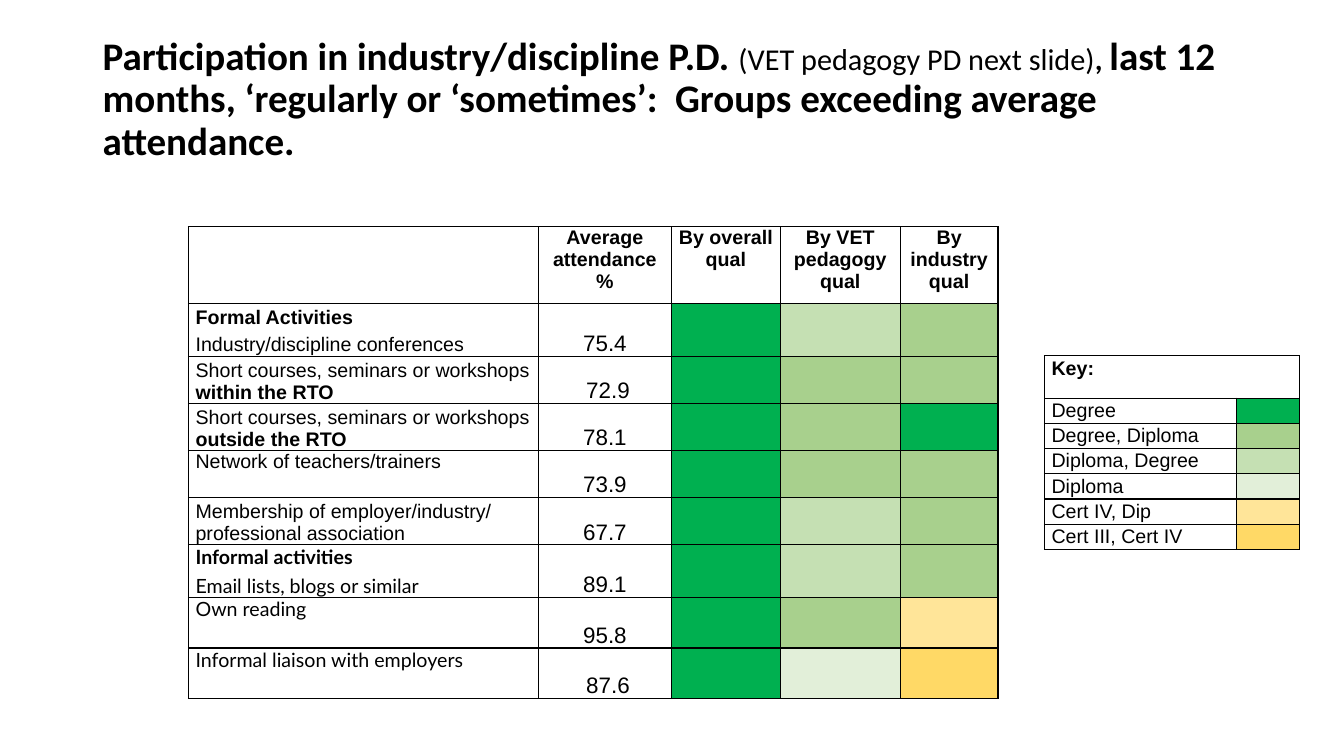
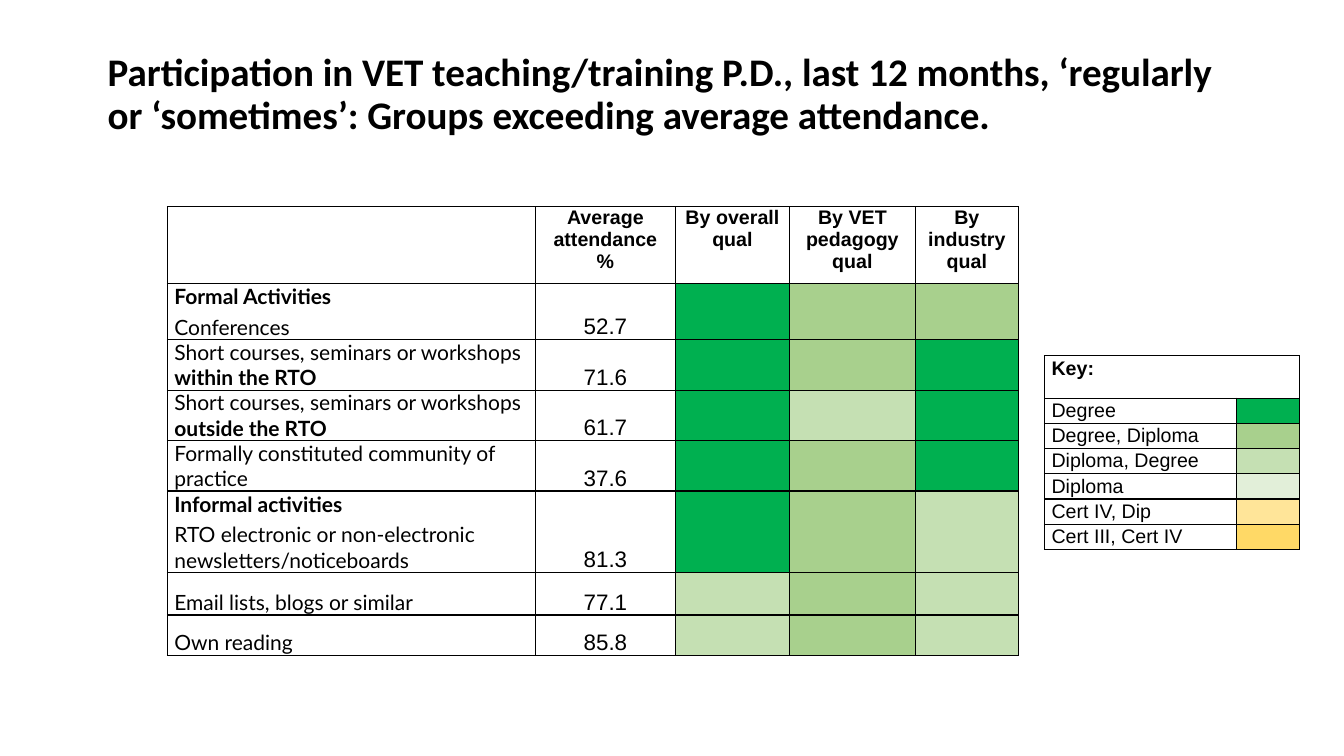
import dataclasses

import lxml.etree
import pptx
import pptx.dml.color
import pptx.enum.text
import pptx.oxml.ns
import pptx.util

Inches = pptx.util.Inches
Pt = pptx.util.Pt
ALIGN = pptx.enum.text.PP_ALIGN
ANCHOR = pptx.enum.text.MSO_ANCHOR

WHITE, BLACK = "FFFFFF", "000000"
LEVELS = {
    "Degree": "00B050",
    "Degree, Diploma": "A8D08D",
    "Diploma, Degree": "C5E0B3",
    "Diploma": "E2EFD9",
    "Cert IV, Dip": "FFE599",
    "Cert III, Cert IV": "FFD966",
}
DEG, DEG_DIP, DIP_DEG, DIP, CERT4, CERT3 = LEVELS.values()
HEADINGS = ["Average attendance %", "By overall qual",
            "By VET pedagogy qual", "By industry qual"]
HEADING_HEIGHT = 0.76


def color(hex_string):
    return pptx.dml.color.RGBColor.from_string(hex_string)


@dataclasses.dataclass
class Activity:
    """One table row; tail is bold text after the name, group a bold line above it."""
    name: str
    average: str
    fills: tuple
    height: float
    tail: str = ""
    group: str = ""
    font: str = "Lato"
    anchor: ANCHOR = ANCHOR.BOTTOM

    def paragraphs(self):
        lines = [[(self.group, True)]] if self.group else []
        return lines + [[(self.name, False)] + ([(self.tail, True)] if self.tail else [])]


class Deck:
    def __init__(self):
        self.prs = pptx.Presentation()
        self.prs.slide_width, self.prs.slide_height = Inches(13.33), Inches(7.5)
        self.slide = None

    def add_slide(self):
        self.slide = self.prs.slides.add_slide(self.prs.slide_layouts[6])

    def add_run(self, paragraph, text, size, bold=False, font="Arial"):
        run = paragraph.add_run()
        run.text = text
        run.font.size, run.font.bold, run.font.name = Pt(size), bold, font
        run.font.color.rgb = color(BLACK)

    def title(self, left, top, runs):
        frame = self.slide.shapes.add_textbox(
            Inches(left), Inches(top), Inches(11.5), Inches(1.45)).text_frame
        frame.word_wrap = True
        frame.vertical_anchor = ANCHOR.MIDDLE
        paragraph = frame.paragraphs[0]
        paragraph.line_spacing = 0.9
        for text, size, bold in runs:
            self.add_run(paragraph, text, size, bold, "Calibri")

    def table(self, left, top, widths, heights):
        table = self.slide.shapes.add_table(
            len(heights), len(widths), Inches(left), Inches(top),
            Inches(sum(widths)), Inches(sum(heights))).table
        table.first_row = table.horz_banding = False
        for column, width in zip(table.columns, widths):
            column.width = Inches(width)
        for row, height in zip(table.rows, heights):
            row.height = Inches(height)
        for cell in table.iter_cells():
            self.style_cell(cell)
        return table

    def style_cell(self, cell):
        """White cell with thin black borders, whose empty text stays small."""
        cell.margin_left = cell.margin_right = Inches(0.07)
        cell.margin_top = cell.margin_bottom = 0
        self.fill(cell, WHITE)
        qn = pptx.oxml.ns.qn
        properties = cell._tc.get_or_add_tcPr()
        for index, side in enumerate("LRTB"):
            line = lxml.etree.Element(qn(f"a:ln{side}"), w=str(Pt(1)))
            solid = lxml.etree.SubElement(line, qn("a:solidFill"))
            lxml.etree.SubElement(solid, qn("a:srgbClr"), val=BLACK)
            properties.insert(index, line)
        lxml.etree.SubElement(cell.text_frame.paragraphs[0]._p,
                              qn("a:endParaRPr"), sz="1000")

    def fill(self, cell, hex_string):
        cell.fill.solid()
        cell.fill.fore_color.rgb = color(hex_string)

    def cell_text(self, cell, paragraphs, size=14, font="Arial", align=ALIGN.LEFT,
                  anchor=ANCHOR.TOP, gap=0, line_spacing=1.0):
        cell.vertical_anchor = anchor
        frame = cell.text_frame
        for index, runs in enumerate(paragraphs):
            paragraph = frame.add_paragraph() if index else frame.paragraphs[0]
            paragraph.alignment = align
            paragraph.space_before = paragraph.space_after = Pt(gap)
            paragraph.line_spacing = line_spacing
            for text, bold in runs:
                self.add_run(paragraph, text, size, bold, font)

    def attendance(self, left, top, widths, activities, size):
        heights = [HEADING_HEIGHT] + [activity.height for activity in activities]
        table = self.table(left, top, widths, heights)
        for column, heading in enumerate(HEADINGS, 1):
            self.cell_text(table.cell(0, column), [[(heading, True)]],
                           align=ALIGN.CENTER, gap=4)
        for row, activity in enumerate(activities, 1):
            self.cell_text(table.cell(row, 0), activity.paragraphs(), size,
                           activity.font, anchor=activity.anchor, gap=2)
            self.cell_text(table.cell(row, 1), [[(activity.average, False)]], 16,
                           align=ALIGN.CENTER, anchor=ANCHOR.BOTTOM, gap=2)
            for column, level in enumerate(activity.fills, 2):
                self.fill(table.cell(row, column), level)

    def key(self):
        table = self.table(10.36, 3.53, [1.9, 0.63], [0.42] + [0.25] * len(LEVELS))
        table.cell(0, 0).merge(table.cell(0, 1))
        self.cell_text(table.cell(0, 0), [[("Key:", True)]], line_spacing=1.07)
        for row, (label, level) in enumerate(LEVELS.items(), 1):
            self.cell_text(table.cell(row, 0), [[(label, False)]], line_spacing=1.07)
            self.fill(table.cell(row, 1), level)


COURSES = "Short courses, seminars or workshops "
INSIDE, OUTSIDE = "within the RTO", "outside the RTO"
FORMAL, INFORMAL = "Formal Activities", "Informal activities"
EMAIL, READING = "Email lists, blogs or similar", "Own reading"

INDUSTRY_PD = [
    Activity("Industry/discipline conferences", "75.4", (DEG, DIP_DEG, DEG_DIP), 0.5,
             group=FORMAL, font="Arial"),
    Activity(COURSES, " 72.9", (DEG, DEG_DIP, DEG_DIP), 0.44, tail=INSIDE, font="Arial"),
    Activity(COURSES, "78.1", (DEG, DEG_DIP, DEG), 0.44, tail=OUTSIDE, font="Arial"),
    Activity("Network of teachers/trainers", "73.9", (DEG, DEG_DIP, DEG_DIP), 0.47,
             font="Arial", anchor=ANCHOR.TOP),
    Activity("Membership of employer/industry/ professional association", "67.7",
             (DEG, DIP_DEG, DEG_DIP), 0.44, font="Arial"),
    Activity(EMAIL, "89.1", (DEG, DIP_DEG, DEG_DIP), 0.52, group=INFORMAL),
    Activity(READING, "95.8", (DEG, DEG_DIP, CERT4), 0.5, anchor=ANCHOR.TOP),
    Activity("Informal liaison with employers", " 87.6", (DEG, DIP, CERT3), 0.5,
             anchor=ANCHOR.TOP),
]
TEACHING_PD = [
    Activity("Conferences", "52.7", (DEG, DEG_DIP, DEG_DIP), 0.56, group=FORMAL),
    Activity(COURSES, "71.6", (DEG, DEG_DIP, DEG), 0.5, tail=INSIDE),
    Activity(COURSES, "61.7", (DEG, DIP_DEG, DEG), 0.5, tail=OUTSIDE),
    Activity("Formally constituted community of practice", "37.6",
             (DEG, DEG_DIP, DEG), 0.5),
    Activity("RTO electronic or non-electronic newsletters/noticeboards", "81.3",
             (DEG, DEG_DIP, DIP_DEG), 0.81, group=INFORMAL),
    Activity(EMAIL, "77.1", (DIP_DEG, DEG_DIP, DIP_DEG), 0.42),
    Activity(READING, "85.8", (DIP_DEG, DEG_DIP, DIP_DEG), 0.4),
]


def main():
    deck = Deck()

    deck.add_slide()
    deck.title(0.92, 0.27, [
        ("Participation in industry/discipline P.D. ", 27.9, True),
        ("(VET pedagogy PD next slide)", 21.6, False),
        (", ", 21.6, True),
        ("last 12 months, ‘regularly or ‘sometimes’:  Groups exceeding average "
         "attendance.", 27.9, True)])
    deck.attendance(1.87, 2.25, [3.47, 1.32, 1.08, 1.19, 0.97], INDUSTRY_PD, 14)
    deck.key()

    deck.add_slide()
    deck.title(0.97, 0.22, [
        ("Participation in VET teaching/training P.D., last 12 months, ‘regularly or "
         "‘sometimes’: Groups exceeding average attendance.", 27.9, True)])
    deck.attendance(1.66, 2.05, [3.65, 1.39, 1.13, 1.25, 1.02], TEACHING_PD, 15)
    deck.key()

    deck.prs.save("out.pptx")


if __name__ == "__main__":
    main()
